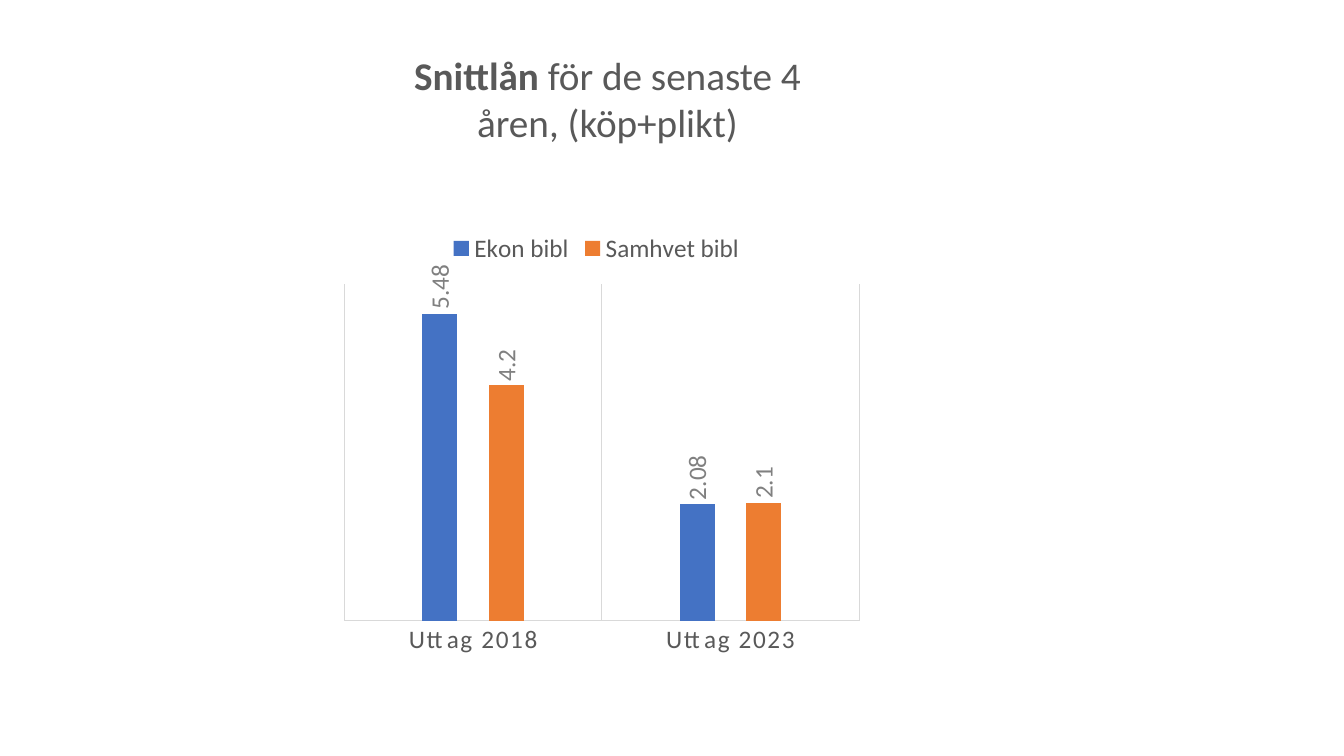
from dataclasses import dataclass

from lxml.etree import SubElement
from pptx import Presentation
from pptx.chart.data import CategoryChartData
from pptx.dml.color import RGBColor
from pptx.enum.chart import XL_CHART_TYPE, XL_LABEL_POSITION, XL_LEGEND_POSITION, XL_TICK_MARK
from pptx.enum.text import MSO_AUTO_SIZE, PP_ALIGN
from pptx.oxml.ns import qn
from pptx.util import Inches, Pt


@dataclass(frozen=True)
class Theme:
    font: str = "Calibri"
    ink: str = "595959"
    label: str = "808080"
    rule: str = "D9D9D9"
    libraries: tuple = ("4472C4", "ED7D31")
    title_size: int = 28
    chart_size: int = 18
    rule_width: float = 0.75


def apply_format(target, values):
    for name, value in values.items():
        setattr(target, name, value)


class LoanSlide:
    """Draws text and column charts on one slide in a shared style."""

    def __init__(self, slide, theme):
        self.slide = slide
        self.theme = theme

    def style_font(self, font, size, color, **extra):
        apply_format(font, {"name": self.theme.font, "size": Pt(size), **extra})
        font.color.rgb = RGBColor.from_string(color)

    def style_rule(self, line):
        line.color.rgb = RGBColor.from_string(self.theme.rule)
        line.width = Pt(self.theme.rule_width)

    def add_title(self, box, phrases):
        frame = self.slide.shapes.add_textbox(*map(Inches, box)).text_frame
        apply_format(frame, {"word_wrap": True, "auto_size": MSO_AUTO_SIZE.SHAPE_TO_FIT_TEXT})
        heading = frame.paragraphs[0]
        heading.alignment = PP_ALIGN.CENTER
        for words, bold in phrases:
            phrase = heading.add_run()
            phrase.text = words
            self.style_font(phrase.font, self.theme.title_size, self.theme.ink, bold=bold)

    def add_columns(self, box, categories, loans, plot_area):
        loan_data = CategoryChartData()
        loan_data.categories = categories
        for library, averages in loans.items():
            loan_data.add_series(library, averages)
        chart = self.slide.shapes.add_chart(
            XL_CHART_TYPE.COLUMN_CLUSTERED, *map(Inches, box), loan_data).chart
        apply_format(chart, {"has_title": False, "has_legend": True})
        apply_format(chart.legend, {"position": XL_LEGEND_POSITION.TOP, "include_in_layout": False})
        self.style_font(chart.legend.font, self.theme.chart_size, self.theme.ink)
        self.style_axes(chart)
        columns = chart.plots[0]
        apply_format(columns, {"gap_width": 444, "overlap": -90, "vary_by_categories": False})
        for library, color in zip(columns.series, self.theme.libraries):
            self.style_series(library, color)
        self.place_plot(chart, plot_area)

    def style_axes(self, chart):
        years = chart.category_axis
        apply_format(years, {"has_major_gridlines": True, "major_tick_mark": XL_TICK_MARK.NONE,
                             "minor_tick_mark": XL_TICK_MARK.NONE})
        self.style_font(years.tick_labels.font, self.theme.chart_size, self.theme.ink)
        years._element.find(".//" + qn("a:defRPr")).set("spc", "120")
        for line in (years.format.line, years.major_gridlines.format.line):
            self.style_rule(line)
        apply_format(chart.value_axis, {"visible": False, "has_major_gridlines": False,
                                        "minimum_scale": 0, "maximum_scale": 6})

    def style_series(self, library, color):
        library.format.fill.solid()
        library.format.fill.fore_color.rgb = RGBColor.from_string(color)
        library.invert_if_negative = False
        labels = library.data_labels
        apply_format(labels, {"show_value": True, "position": XL_LABEL_POSITION.OUTSIDE_END})
        self.style_font(labels.font, self.theme.chart_size, self.theme.label)
        apply_text_turn = labels._element.find(".//" + qn("a:bodyPr")).set
        for name, value in {"rot": "-5400000", "vert": "horz"}.items():
            apply_text_turn(name, value)

    def place_plot(self, chart, plot_area):
        area = chart._chartSpace.find(".//" + qn("c:plotArea"))
        for automatic in area.findall(qn("c:layout")):
            area.remove(automatic)
        layout = SubElement(area, qn("c:layout"))
        area.insert(0, layout)
        manual = SubElement(layout, qn("c:manualLayout"))
        settings = {"layoutTarget": "inner", "xMode": "edge", "yMode": "edge",
                    **dict(zip("xywh", plot_area))}
        for name, value in settings.items():
            SubElement(manual, qn(f"c:{name}")).set("val", str(value))


def main():
    deck = Presentation()
    apply_format(deck, {"slide_width": Inches(13.33), "slide_height": Inches(7.5)})
    loan_slide = LoanSlide(deck.slides.add_slide(deck.slide_layouts[6]), Theme())
    loan_slide.add_title((3.64, 0.46, 4.77, 1.04),
                         [("Snittlån", True), (" för de senaste 4 åren, (köp+plikt)", False)])
    loan_slide.add_columns((3.2, 2.19, 5.43, 4.51), ["Uttag 2018", "Uttag 2023"],
                           {"Ekon bibl": (5.48, 2.08), "Samhvet bibl": (4.2, 2.1)},
                           (0.04, 0.14, 0.94, 0.74))
    deck.save("out.pptx")


if __name__ == "__main__":
    main()
